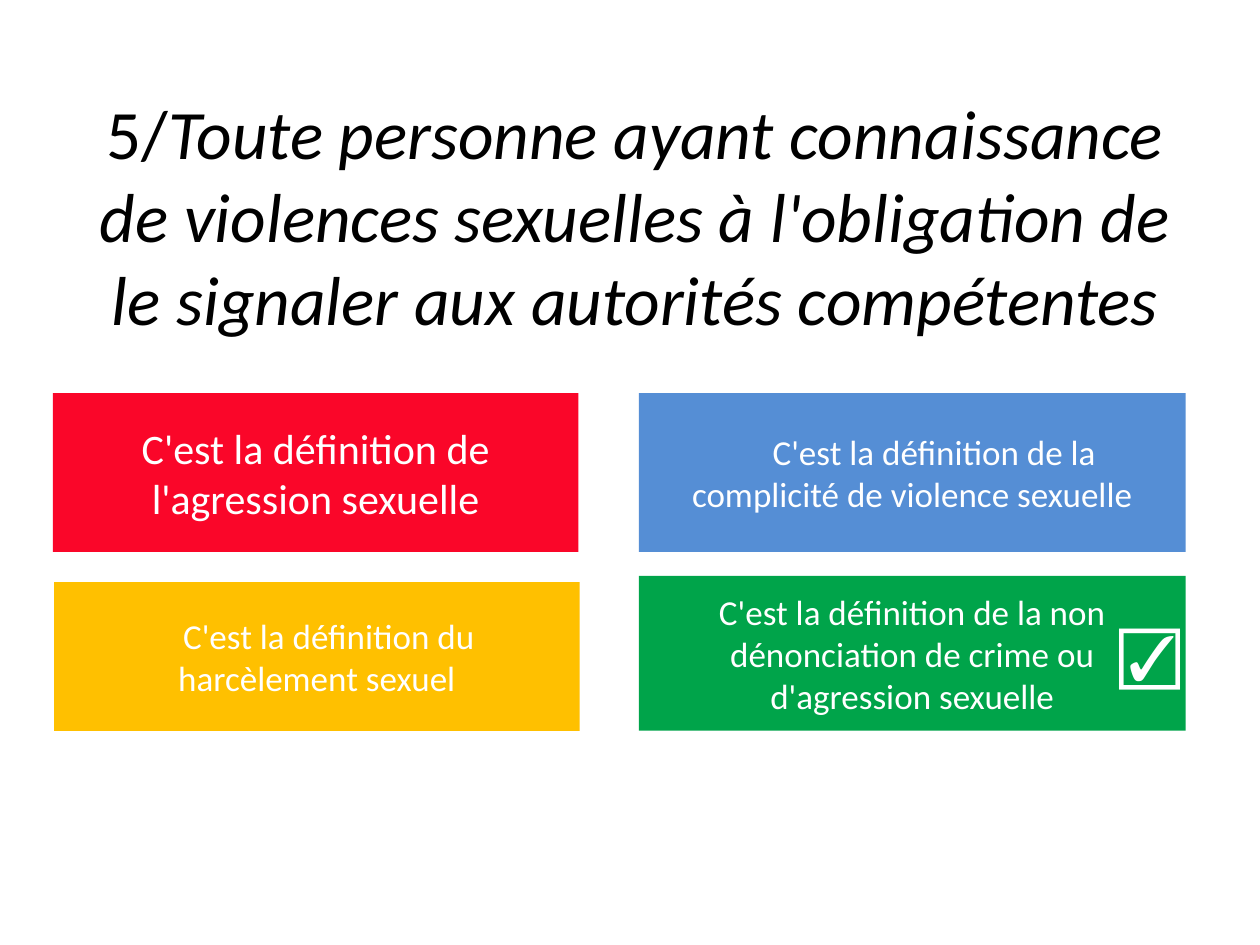
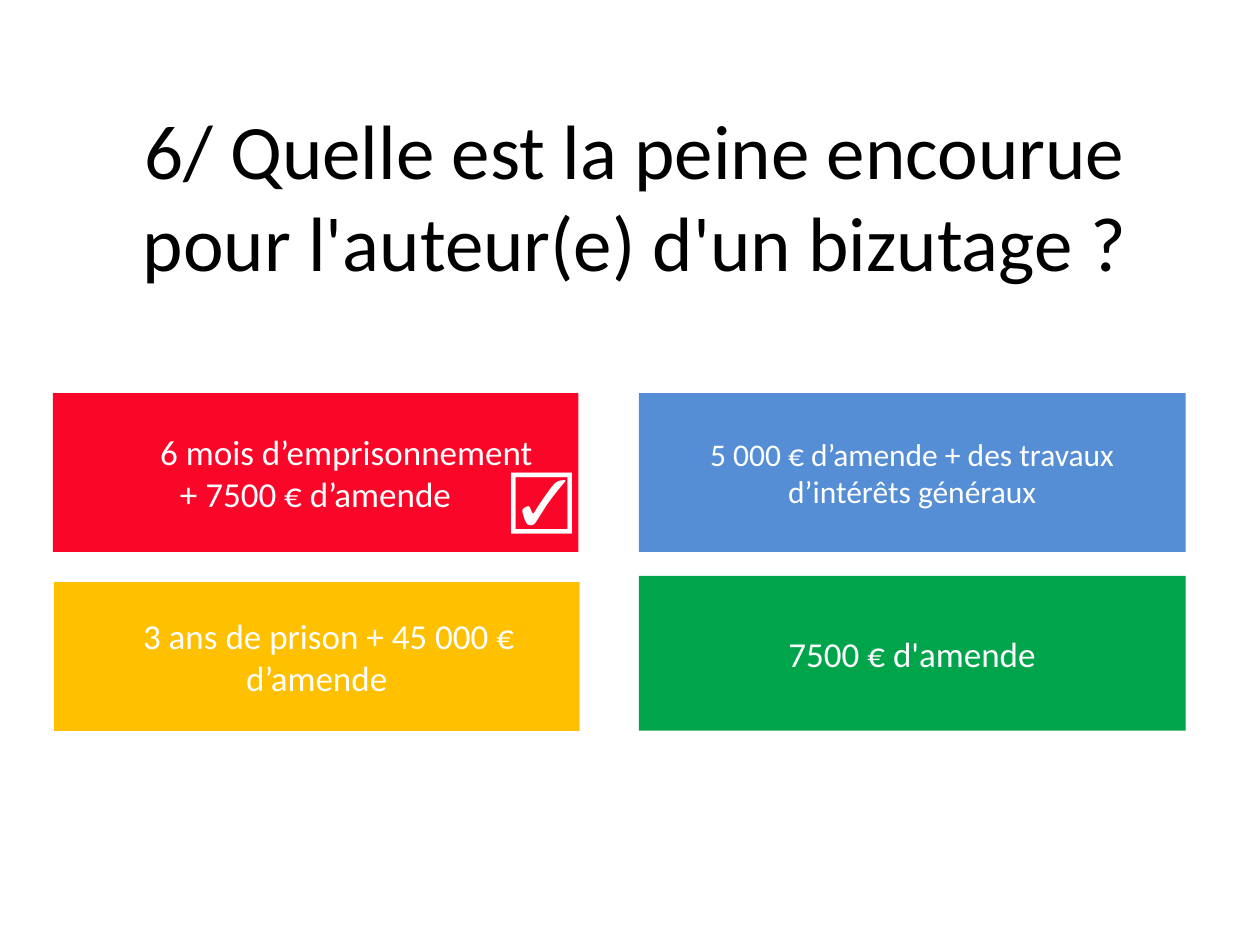
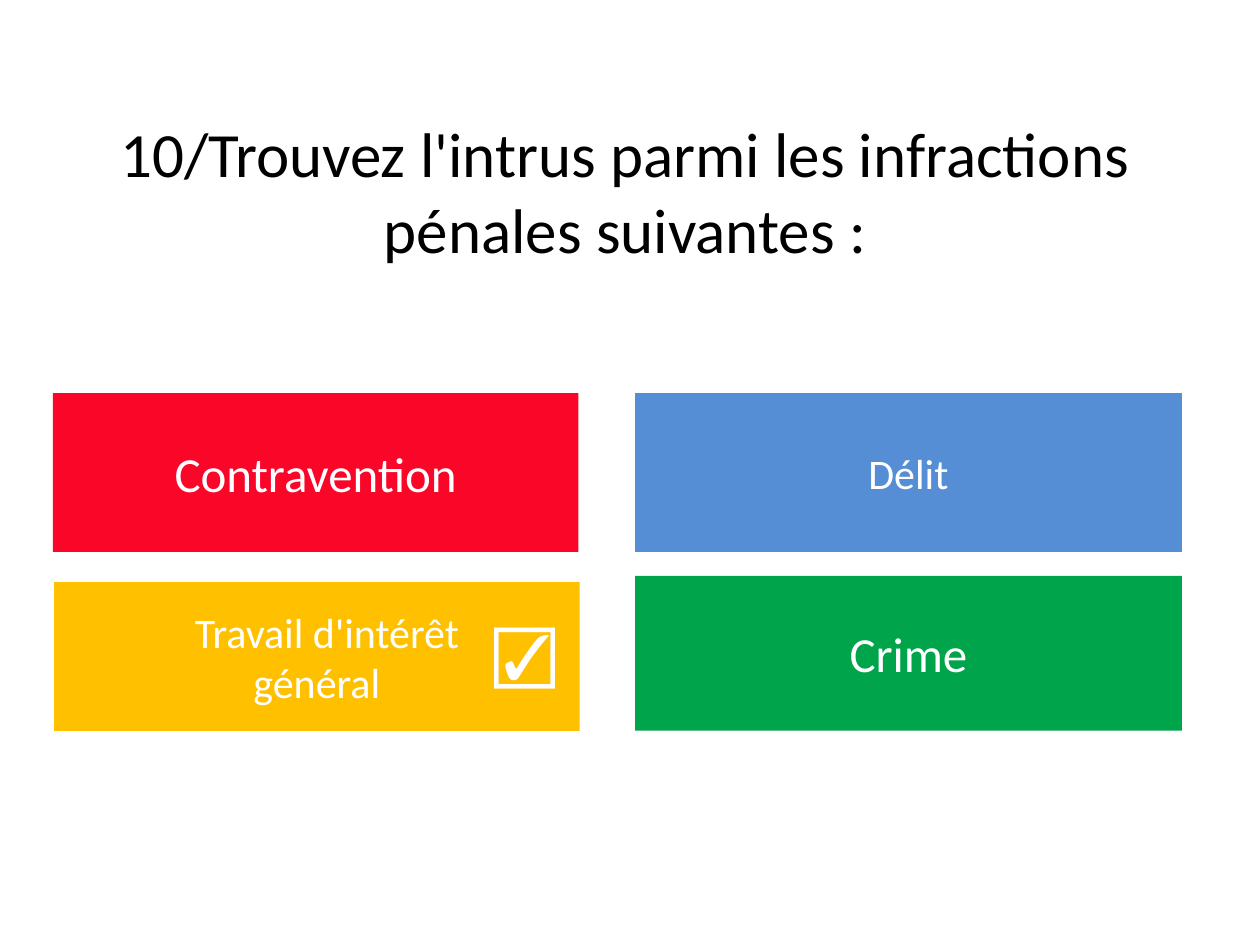
from dataclasses import dataclass

from pptx import Presentation
from pptx.dml.color import RGBColor
from pptx.enum.shapes import MSO_SHAPE
from pptx.enum.text import MSO_ANCHOR, MSO_AUTO_SIZE, PP_ALIGN
from pptx.util import Inches, Pt

RECTANGLE = MSO_SHAPE.RECTANGLE
MIDDLE = MSO_ANCHOR.MIDDLE
CENTER = PP_ALIGN.CENTER
NO_AUTOFIT = MSO_AUTO_SIZE.NONE
GROW_TO_TEXT = MSO_AUTO_SIZE.SHAPE_TO_FIT_TEXT

FONT = "Calibri"
WHITE = "FFFFFF"
BLACK = "000000"
TITLE_TOP, TITLE_WIDTH = 0.76, 8.9
ANSWER_MARGIN = 0.3
CHECK_SIZE = (0.39, 0.71)


@dataclass(frozen=True)
class Tile:
    left: float
    top: float
    width: float
    height: float
    color: str


@dataclass(frozen=True)
class Answer:
    lines: tuple[str, ...]
    size: float = 20
    first_indent: float = 0


@dataclass(frozen=True)
class Question:
    number: str
    text: str
    size: float
    title_left: float
    title_height: float
    answers: tuple[Answer, ...]
    check_position: tuple[float, float]
    italic: bool = False
    right_column: float = 5.07


QUESTIONS = (
    Question(
        "5/",
        "Toute personne ayant connaissance de violences sexuelles à "
        "l'obligation de le signaler aux autorités compétentes",
        39.6, 0.59, 1.89,
        (
            Answer(("C'est la définition de l'agression sexuelle",), 24),
            Answer(("C'est la définition de la complicité de violence sexuelle",),
                   first_indent=0.35),
            Answer(("C'est la définition du harcèlement sexuel",), first_indent=0.19),
            Answer(("C'est la définition de la non dénonciation de crime ou "
                    "d'agression sexuelle",)),
        ),
        (8.78, 4.83),
        italic=True,
    ),
    Question(
        "6/ ",
        "Quelle est la peine encourue pour l'auteur(e) d'un bizutage ?",
        44, 0.59, 1.57,
        (
            Answer(("6 mois d’emprisonnement", "+ 7500 € d’amende"), first_indent=0.49),
            Answer(("5 000 € d’amende + des travaux d’intérêts généraux",), 18),
            Answer(("3 ans de prison + 45 000 € d’amende",), first_indent=0.19),
            Answer(("7500 € d'amende",)),
        ),
        (3.95, 3.59),
    ),
    Question(
        "10/",
        "Trouvez l'intrus parmi les infractions pénales suivantes :",
        36, 0.51, 1.5,
        (
            Answer(("Contravention",), 28),
            Answer(("Délit",), 24),
            Answer(("Travail d'intérêt", "général"), 24, 0.16),
            Answer(("Crime",), 28),
        ),
        (3.82, 4.82),
        right_column=5.04,
    ),
)


def rgb(color: str) -> RGBColor:
    return RGBColor.from_string(color)


def fill_solid(shape, color: str) -> None:
    shape.fill.solid()
    shape.fill.fore_color.rgb = rgb(color)


def add_run(paragraph, text: str, size: float, color: str, italic: bool = False) -> None:
    run = paragraph.add_run()
    run.text = text
    run.font.name = FONT
    run.font.size = Pt(size)
    run.font.color.rgb = rgb(color)
    run.font.italic = italic


def answer_tiles(right_column: float) -> tuple[Tile, ...]:
    return (
        Tile(0.42, 3.12, 4.17, 1.26, "FA0629"),
        Tile(right_column, 3.12, 4.34, 1.26, "558ED5"),
        Tile(0.43, 4.62, 4.17, 1.18, "FFC000"),
        Tile(right_column, 4.57, 4.34, 1.23, "00A44A"),
    )


def format_title(title, question: Question) -> None:
    title.left, title.top = Inches(question.title_left), Inches(TITLE_TOP)
    title.width, title.height = Inches(TITLE_WIDTH), Inches(question.title_height)
    fill_solid(title, WHITE)
    frame = title.text_frame
    frame.auto_size = NO_AUTOFIT
    frame.vertical_anchor = MIDDLE
    paragraph = frame.paragraphs[0]
    paragraph.alignment = CENTER
    add_run(paragraph, question.number, question.size, BLACK)
    add_run(paragraph, question.text, question.size, BLACK, question.italic)


def add_answer(slide, tile: Tile, answer: Answer) -> None:
    shape = slide.shapes.add_shape(
        RECTANGLE, Inches(tile.left), Inches(tile.top),
        Inches(tile.width), Inches(tile.height))
    shape.shadow.inherit = False
    shape.line.fill.background()
    fill_solid(shape, tile.color)
    frame = shape.text_frame
    frame.word_wrap = True
    frame.vertical_anchor = MIDDLE
    frame.margin_left = frame.margin_right = Inches(ANSWER_MARGIN)
    for index, line in enumerate(answer.lines):
        paragraph = frame.add_paragraph() if index else frame.paragraphs[0]
        paragraph.alignment = CENTER
        if index == 0 and answer.first_indent:
            properties = paragraph._p.get_or_add_pPr()
            properties.set("marL", "0")
            properties.set("indent", str(Inches(answer.first_indent)))
        add_run(paragraph, line, answer.size, WHITE)


def add_check_mark(slide, position: tuple[float, float]) -> None:
    box = slide.shapes.add_textbox(*(Inches(value) for value in position + CHECK_SIZE))
    frame = box.text_frame
    frame.word_wrap = True
    frame.auto_size = GROW_TO_TEXT
    add_run(frame.paragraphs[0], "☑", 36, WHITE)


def add_question_slide(presentation, question: Question) -> None:
    slide = presentation.slides.add_slide(presentation.slide_layouts[0])
    subtitle = slide.placeholders[1].element
    subtitle.getparent().remove(subtitle)
    format_title(slide.shapes.title, question)
    for tile, answer in zip(answer_tiles(question.right_column), question.answers):
        add_answer(slide, tile, answer)
    add_check_mark(slide, question.check_position)


def main() -> None:
    presentation = Presentation()
    presentation.slide_width = Inches(10)
    presentation.slide_height = Inches(7.5)
    for question in QUESTIONS:
        add_question_slide(presentation, question)
    presentation.save("out.pptx")


if __name__ == "__main__":
    main()
